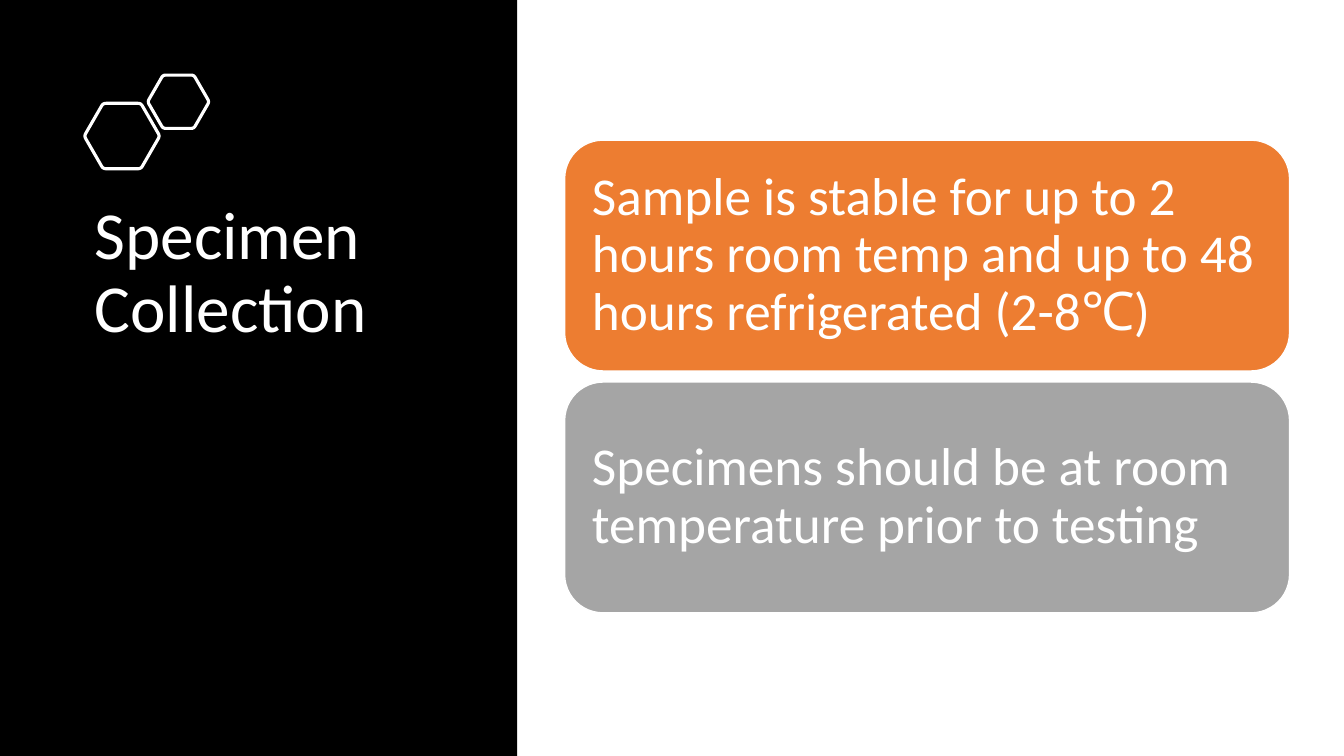
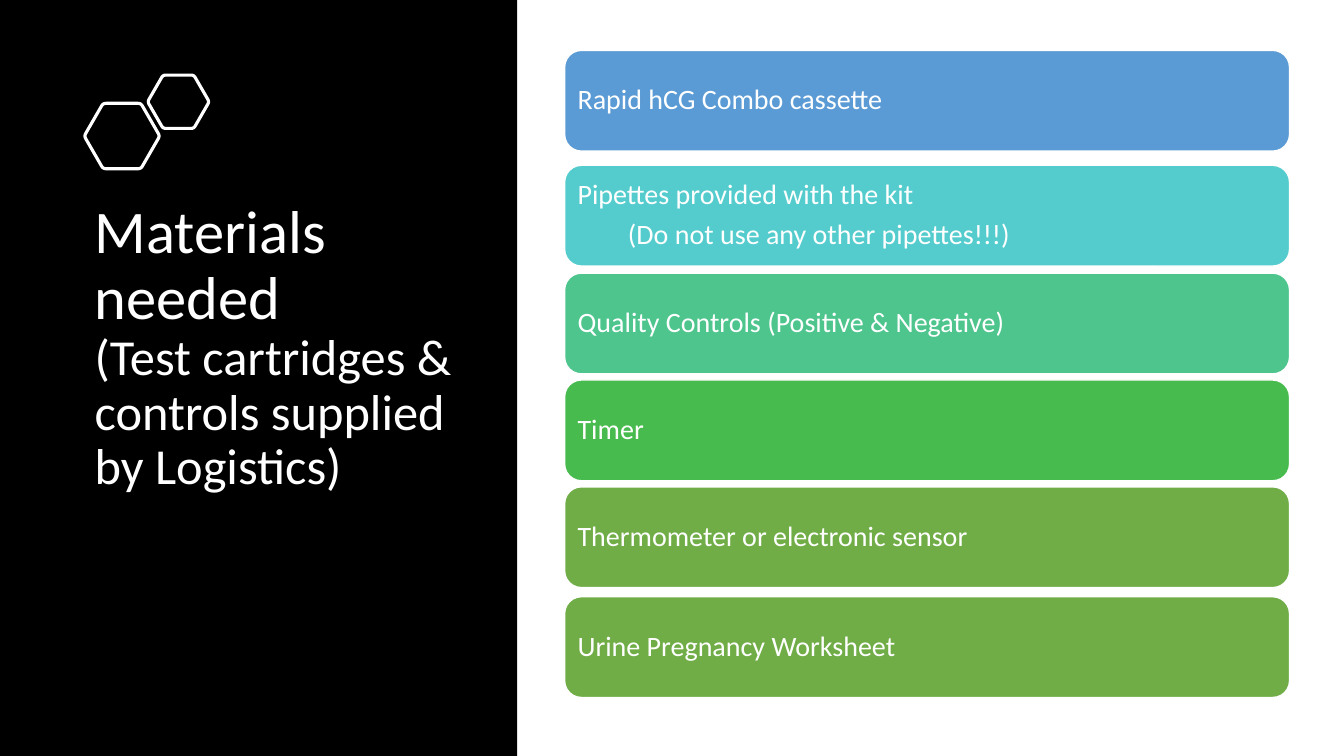
from dataclasses import dataclass
from math import cos, pi, sin

from pptx import Presentation
from pptx.dml.color import RGBColor
from pptx.enum.shapes import MSO_SHAPE as SHAPE
from pptx.enum.text import MSO_ANCHOR as ANCHOR, PP_ALIGN as ALIGN
from pptx.util import Inches, Pt

FONT = "Calibri"
BLACK, WHITE = "000000", "FFFFFF"
CARD_LEFT, CARD_WIDTH = 5.6, 7.19
DETAIL_INDENT = 0.5


@dataclass
class Hexagon:
    x: float  # centre
    y: float
    side: float
    corner: float  # length cut from each side by the rounding


@dataclass
class TitleLine:
    text: str
    size: float


@dataclass
class Card:
    top: float
    fill: str
    text: str
    detail: str = ""


@dataclass
class CardStyle:
    height: float
    inset: float
    size: float


@dataclass
class Page:
    title: list[TitleLine]
    style: CardStyle
    cards: list[Card]


HEXAGONS = [Hexagon(1.21, 1.35, 0.375, 0.03), Hexagon(1.77, 1.01, 0.305, 0.025)]

PAGES = [
    Page(
        [TitleLine("Specimen Collection", 48)],
        CardStyle(2.29, 0.16, 38),
        [
            Card(1.39, "ED7D31", "Sample is stable for up to 2 hours room temp "
                                 "and up to 48 hours refrigerated (2-8℃)"),
            Card(3.79, "A5A5A5", "Specimens should be at room temperature prior to testing"),
        ],
    ),
    Page(
        [TitleLine("Materials needed", 43.2),
         TitleLine("(Test cartridges & controls supplied by Logistics)", 36)],
        CardStyle(1, 0.08, 20),
        [
            Card(0.5, "5B9BD5", "Rapid hCG Combo cassette"),
            Card(1.64, "54CCCD", "Pipettes provided with the kit",
                 "(Do not use any other pipettes!!!)"),
            Card(2.71, "4DC58D", "Quality Controls (Positive & Negative)"),
            Card(3.77, "48BB4F", "Timer"),
            Card(4.83, "70AD47", "Thermometer or electronic sensor"),
            Card(5.92, "70AD47", "Urine Pregnancy Worksheet"),
        ],
    ),
]


def rgb(color: str) -> RGBColor:
    return RGBColor.from_string(color)


def paint(sp, fill: str | None = None, line: str | None = None, width: float = 1) -> None:
    sp.shadow.inherit = False
    if fill:
        sp.fill.solid()
        sp.fill.fore_color.rgb = rgb(fill)
    else:
        sp.fill.background()
    if line:
        sp.line.color.rgb = rgb(line)
        sp.line.width = Pt(width)
    else:
        sp.line.fill.background()


def style_paragraph(p, size: float | None = None) -> None:
    p.alignment = ALIGN.LEFT
    p.line_spacing = 0.9
    p.font.name = FONT
    p.font.color.rgb = rgb(WHITE)
    if size:
        p.font.size = Pt(size)


def add_hexagon(s, h: Hexagon) -> None:
    corners = [(h.x + h.side * cos(k * pi / 3), h.y + h.side * sin(k * pi / 3))
               for k in range(6)]
    cut, steps = h.corner / h.side, 4
    points = []
    for k, (x, y) in enumerate(corners):
        (ax, ay), (bx, by) = corners[k - 1], corners[(k + 1) % 6]
        # Quadratic curve around each corner
        for t in (i / steps for i in range(steps + 1)):
            u, v = cut * (1 - t) ** 2, cut * t ** 2
            points.append((Inches(x + u * (ax - x) + v * (bx - x)),
                           Inches(y + u * (ay - y) + v * (by - y))))
    outline = s.shapes.build_freeform(*points[0])
    outline.add_line_segments(points[1:], close=True)
    paint(outline.convert_to_shape(), line=WHITE, width=2.25)


def add_title(s, lines: list[TitleLine]) -> None:
    box = s.shapes.add_textbox(Inches(0.84), Inches(1.95), Inches(3.92), Inches(3.5))
    tf = box.text_frame
    tf.word_wrap = True
    p = tf.paragraphs[0]
    style_paragraph(p, lines[0].size)
    for i, line in enumerate(lines):
        if i:
            p.add_line_break()
        r = p.add_run()
        r.text = line.text
        r.font.size = Pt(line.size)


def add_card(s, card: Card, style: CardStyle) -> None:
    sp = s.shapes.add_shape(SHAPE.ROUNDED_RECTANGLE, Inches(CARD_LEFT), Inches(card.top),
                            Inches(CARD_WIDTH), Inches(style.height))
    paint(sp, card.fill, WHITE)
    tf = sp.text_frame
    tf.word_wrap = True
    tf.vertical_anchor = ANCHOR.MIDDLE
    tf.margin_left = tf.margin_right = tf.margin_top = tf.margin_bottom = Inches(style.inset)
    p = tf.paragraphs[0]
    p.text = card.text
    style_paragraph(p, style.size)
    if card.detail:
        p = tf.add_paragraph()
        p.text = card.detail
        p._p.get_or_add_pPr().set("marL", str(Inches(DETAIL_INDENT)))
        style_paragraph(p, style.size)
        p.space_before = Pt(0.35 * style.size)


def add_page(prs, page: Page) -> None:
    s = prs.slides.add_slide(prs.slide_layouts[6])
    # Side panel with title and hexagons
    panel = s.shapes.add_shape(SHAPE.RECTANGLE, 0, 0, Inches(5.13), prs.slide_height)
    paint(panel, BLACK)
    add_title(s, page.title)
    for hexagon in HEXAGONS:
        add_hexagon(s, hexagon)
    # Cards
    for card in page.cards:
        add_card(s, card, page.style)


def main() -> None:
    prs = Presentation()
    prs.slide_width, prs.slide_height = Inches(13.33), Inches(7.5)
    for page in PAGES:
        add_page(prs, page)
    prs.save("out.pptx")


if __name__ == "__main__":
    main()
